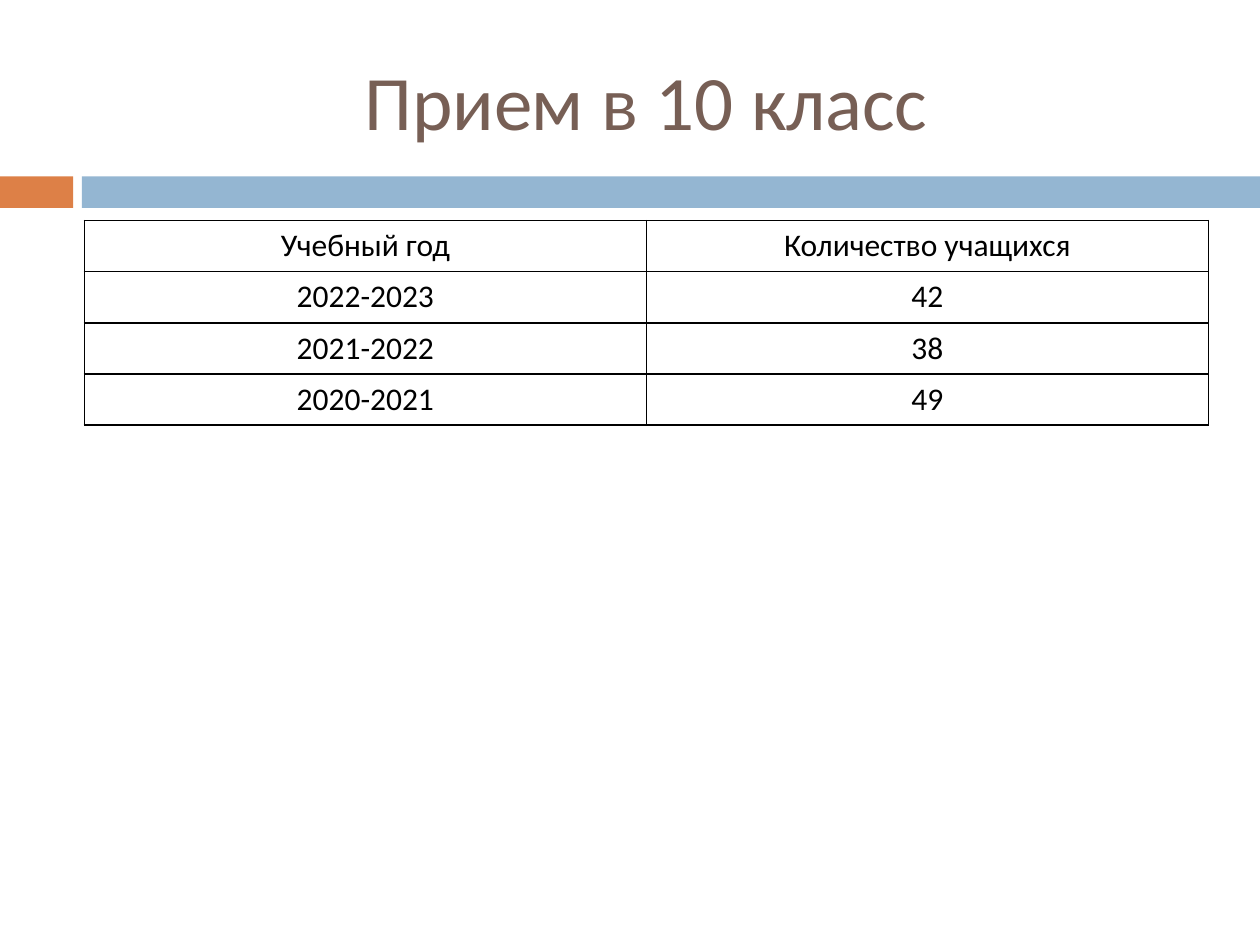
"""Builds the slide on admission to the 10th grade."""
import dataclasses

import lxml.etree
import pptx
import pptx.dml.color
import pptx.enum.shapes
import pptx.enum.text
import pptx.oxml.ns
import pptx.util

WIDTH, HEIGHT = 10, 7.5
FONT = "Calibri"
LEFT, CONTENT_WIDTH = 0.067, 0.892
ROW_HEIGHT = 0.406
ADMISSIONS = [
    ("Учебный год", "Количество учащихся"),
    ("2022-2023", "42"),
    ("2021-2022", "38"),
    ("2020-2021", "49"),
]


@dataclasses.dataclass
class Band:
    left: float
    width: float
    color: str


BANDS = [Band(0, 0.058, "DD8047"), Band(0.065, 0.935, "94B6D2")]


def across(share: float) -> int:
    return pptx.util.Inches(share * WIDTH)


def down(share: float) -> int:
    return pptx.util.Inches(share * HEIGHT)


def rgb(color: str) -> pptx.dml.color.RGBColor:
    return pptx.dml.color.RGBColor.from_string(color)


def write(frame, text: str, size: float, color: str = "000000") -> None:
    para = frame.paragraphs[0]
    para.alignment = pptx.enum.text.PP_ALIGN.CENTER
    span = para.add_run()
    span.text = text
    span.font.name = FONT
    span.font.size = pptx.util.Pt(size)
    span.font.color.rgb = rgb(color)


def draw_band(page, band: Band) -> None:
    box = page.shapes.add_shape(
        pptx.enum.shapes.MSO_SHAPE.RECTANGLE,
        across(band.left), pptx.util.Inches(1.4),
        across(band.width), pptx.util.Inches(0.25),
    )
    box.shadow.inherit = False
    box.fill.solid()
    box.fill.fore_color.rgb = rgb(band.color)
    box.line.fill.background()


def border_cell(cell, color: str = "000000", width: float = 1) -> None:
    properties = cell._tc.get_or_add_tcPr()
    name = pptx.oxml.ns.qn
    for position, side in enumerate(("a:lnL", "a:lnR", "a:lnT", "a:lnB")):
        line = lxml.etree.Element(name(side), w=str(pptx.util.Pt(width)))
        fill = lxml.etree.SubElement(line, name("a:solidFill"))
        lxml.etree.SubElement(fill, name("a:srgbClr"), val=color)
        properties.insert(position, line)


def draw_title(page, text: str) -> None:
    title = page.shapes.title
    title.left, title.top = across(LEFT), pptx.util.Inches(0.25)
    title.width, title.height = across(CONTENT_WIDTH), pptx.util.Inches(1.08)
    title.text_frame.vertical_anchor = pptx.enum.text.MSO_ANCHOR.MIDDLE
    write(title.text_frame, text, size=44, color="775F55")


def draw_table(page, rows: list[tuple[str, ...]]) -> None:
    table = page.shapes.add_table(
        len(rows), len(rows[0]), across(LEFT), pptx.util.Inches(1.75),
        across(CONTENT_WIDTH), pptx.util.Inches(ROW_HEIGHT * len(rows)),
    ).table
    table.first_row = table.horz_banding = False
    for row, texts in zip(table.rows, rows):
        for cell, text in zip(row.cells, texts):
            cell.fill.background()
            border_cell(cell)
            write(cell.text_frame, text, size=18)


def main() -> None:
    deck = pptx.Presentation()
    deck.slide_width, deck.slide_height = across(1), down(1)
    page = deck.slides.add_slide(deck.slide_layouts[5])
    for band in BANDS:
        draw_band(page, band)
    draw_title(page, "Прием в 10 класс")
    draw_table(page, ADMISSIONS)
    deck.save("out.pptx")


if __name__ == "__main__":
    main()
